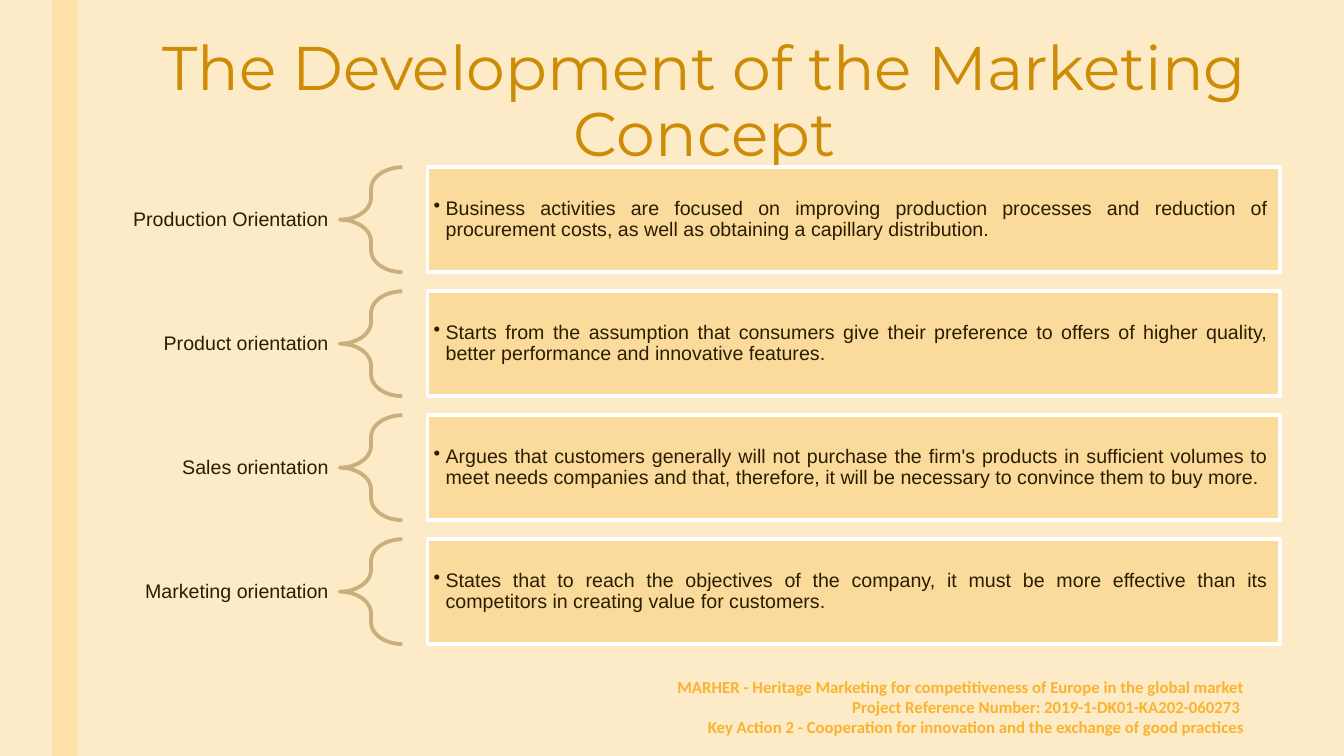
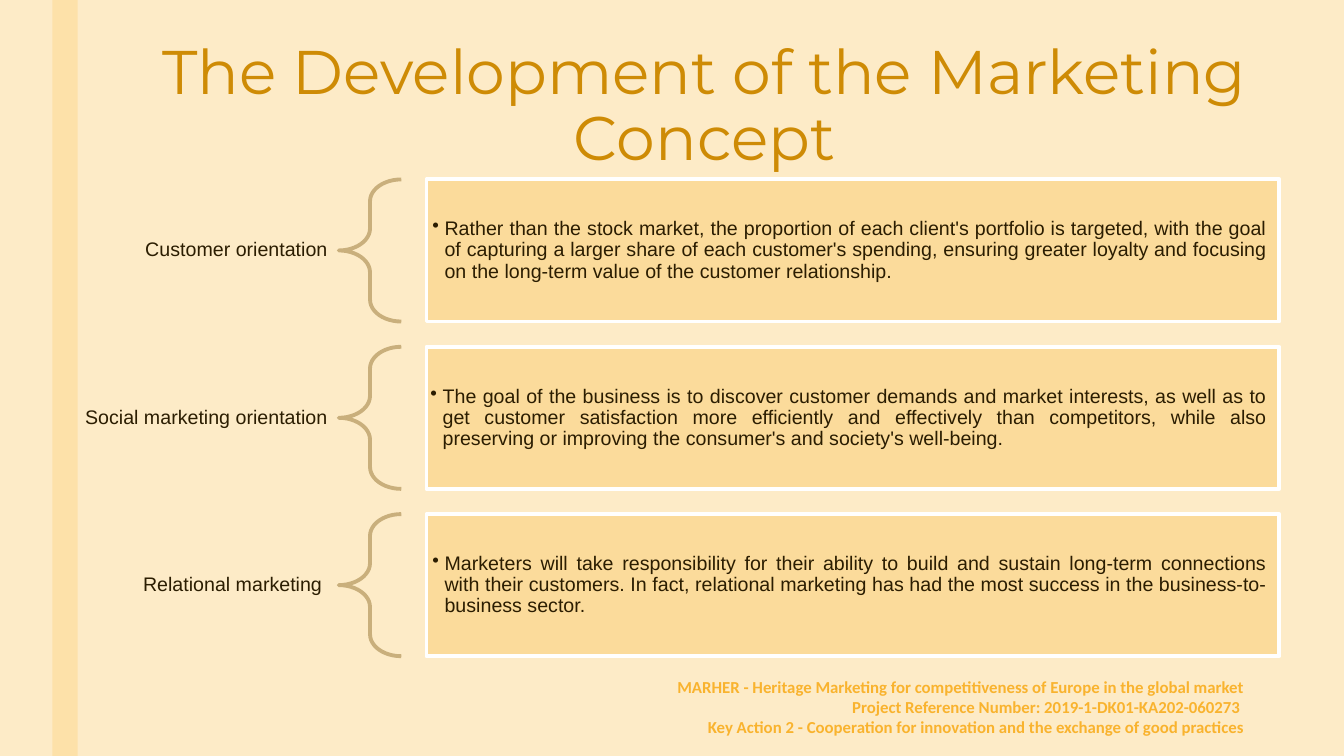
import pptx
import pptx.dml.color
import pptx.enum.shapes
import pptx.enum.text
import pptx.oxml
import pptx.oxml.ns
import pptx.util

Inches = pptx.util.Inches
Pt = pptx.util.Pt
Shape = pptx.enum.shapes.MSO_SHAPE
Align = pptx.enum.text.PP_ALIGN
Anchor = pptx.enum.text.MSO_ANCHOR

# Wording
TITLE = "The Development of the Marketing Concept"
FOOTER = [
    "MARHER - Heritage Marketing for competitiveness of Europe in the global market",
    "Project Reference Number: 2019-1-DK01-KA202-060273 ",
    "Key Action 2 - Cooperation for innovation and the exchange of good practices",
]

# Each row: label, description, left inset of the description
SLIDES = [
    {
        "title_top": 0.33, "left": 0.26, "top": 1.66, "height": 1.04, "pitch": 1.23,
        "rows": [
            ("Production Orientation",
             "Business activities are focused on improving production processes and "
             "reduction of procurement costs, as well as obtaining a capillary "
             "distribution.", 0.06),
            ("Product orientation",
             "Starts from the assumption that consumers give their preference to offers "
             "of higher quality, better performance and innovative features.", 0.06),
            ("Sales orientation",
             "Argues that customers generally will not purchase the firm's products in "
             "sufficient volumes to meet needs companies and that, therefore, it will be "
             "necessary to convince them to buy more.", 0.06),
            ("Marketing orientation",
             "States that to reach the objectives of the company, it must be more "
             "effective than its competitors in creating value for customers.", 0.06),
        ],
    },
    {
        "title_top": 0.37, "left": 0.25, "top": 1.78, "height": 1.41, "pitch": 1.66,
        "rows": [
            ("Customer orientation",
             "Rather than the stock market, the proportion of each client's portfolio is "
             "targeted, with the goal of capturing a larger share of each customer's "
             "spending, ensuring greater loyalty and focusing on the long-term value of "
             "the customer relationship.", 0.06),
            ("Social marketing orientation",
             "The goal of the business is to discover customer demands and market "
             "interests, as well as to get customer satisfaction more efficiently and "
             "effectively than competitors, while also preserving or improving the "
             "consumer's and society's well-being.", 0.04),
            ("Relational marketing ",
             "Marketers will take responsibility for their ability to build and sustain "
             "long-term connections with their customers. In fact, relational marketing "
             "has had the most success in the business-to-business sector.", 0.06),
        ],
    },
]


def color(hex_value):
    return pptx.dml.color.RGBColor.from_string(hex_value)


def apply(target, values):
    for name, value in values.items():
        setattr(target, name, value)


class Deck:
    """Holds the shared style and the slide being drawn."""

    BACKGROUND, BAND, BOX = "FDEBC7", "FDE1A9", "FBDB9B"
    BRACE, BORDER, LINE_WIDTH = "C9AF7C", "FFFFFF", 2.75
    TITLE_FONT = {"name": "Montserrat", "size": Pt(44), "color": "CE8B05"}
    FOOTER_FONT = {"name": "Calibri", "size": Pt(12), "bold": True, "color": "F9B32E"}
    BODY_FONT = {"name": "Arial", "size": Pt(14), "color": "2B1D01"}
    LABEL_INSETS = (0.11, 0.04, 0.11, 0.04)

    def __init__(self):
        self.presentation = pptx.Presentation()
        apply(self.presentation, {"slide_width": Inches(13.33),
                                  "slide_height": Inches(7.5)})
        fill = self.presentation.slide_master.background.fill
        fill.solid()
        fill.fore_color.rgb = color(self.BACKGROUND)
        self.slide = None

    def start_slide(self):
        self.slide = self.presentation.slides.add_slide(
            self.presentation.slide_layouts[6])
        self.shape(Shape.RECTANGLE, (0.52, 0, 0.25, 7.5), fill=self.BAND)
        self.text((5.57, 6.79, 6.87, 0.44), FOOTER, self.FOOTER_FONT, Align.RIGHT)

    def shape(self, kind, box, fill=None, line=None):
        shape = self.slide.shapes.add_shape(kind, *map(Inches, box))
        shape.shadow.inherit = False
        if fill:
            shape.fill.solid()
            shape.fill.fore_color.rgb = color(fill)
        else:
            shape.fill.background()
        if line:
            shape.line.color.rgb = color(line)
            shape.line.width = Pt(self.LINE_WIDTH)
        else:
            shape.line.fill.background()
        return shape

    def fill_text(self, shape, lines, font, align, anchor=Anchor.MIDDLE,
                  spacing=1.0, insets=(0.1, 0.05, 0.1, 0.05)):
        frame = shape.text_frame
        sides = ("margin_left", "margin_top", "margin_right", "margin_bottom")
        apply(frame, {"word_wrap": True, "vertical_anchor": anchor,
                      **dict(zip(sides, map(Inches, insets)))})
        for index, line in enumerate(lines):
            paragraph = frame.add_paragraph() if index else frame.paragraphs[0]
            apply(paragraph, {"alignment": align, "line_spacing": spacing})
            run = paragraph.add_run()
            run.text = line
            apply(run.font, {k: v for k, v in font.items() if k != "color"})
            run.font.color.rgb = color(font["color"])
        return frame

    def text(self, box, lines, font, align, **options):
        shape = self.slide.shapes.add_textbox(*map(Inches, box))
        return self.fill_text(shape, lines, font, align, **options)

    def title(self, top):
        self.text((0.77, top, 12.44, 1.62), [TITLE], self.TITLE_FONT, Align.CENTER,
                  anchor=Anchor.TOP, spacing=0.89)

    def bullet(self, paragraph):
        properties = paragraph._p.get_or_add_pPr()
        properties.set("marL", str(Inches(0.12)))
        properties.set("indent", str(Inches(-0.12)))
        properties.append(pptx.oxml.parse_xml(
            f'<a:buChar {pptx.oxml.ns.nsdecls("a")} char="•"/>'))

    def orientation(self, left, top, height, label, description, inset):
        # Label, brace and description box, side by side
        self.text((left, top, 3.11, height), [label], self.BODY_FONT, Align.RIGHT,
                  spacing=0.9, insets=self.LABEL_INSETS)
        brace = self.shape(Shape.LEFT_BRACE, (left + 3.11, top, 0.62, height),
                           line=self.BRACE)
        brace.adjustments[0] = 0.35
        box = self.shape(Shape.RECTANGLE, (left + 3.98, top, 8.46, height),
                         fill=self.BOX, line=self.BORDER)
        frame = self.fill_text(box, [description], self.BODY_FONT, Align.JUSTIFY,
                               spacing=0.9, insets=(inset, 0.06, 0.12, 0.06))
        self.bullet(frame.paragraphs[0])


def main():
    deck = Deck()
    for content in SLIDES:
        deck.start_slide()
        deck.title(content["title_top"])
        for index, row in enumerate(content["rows"]):
            top = content["top"] + index * content["pitch"]
            deck.orientation(content["left"], top, content["height"], *row)
    deck.presentation.save("out.pptx")


if __name__ == "__main__":
    main()
